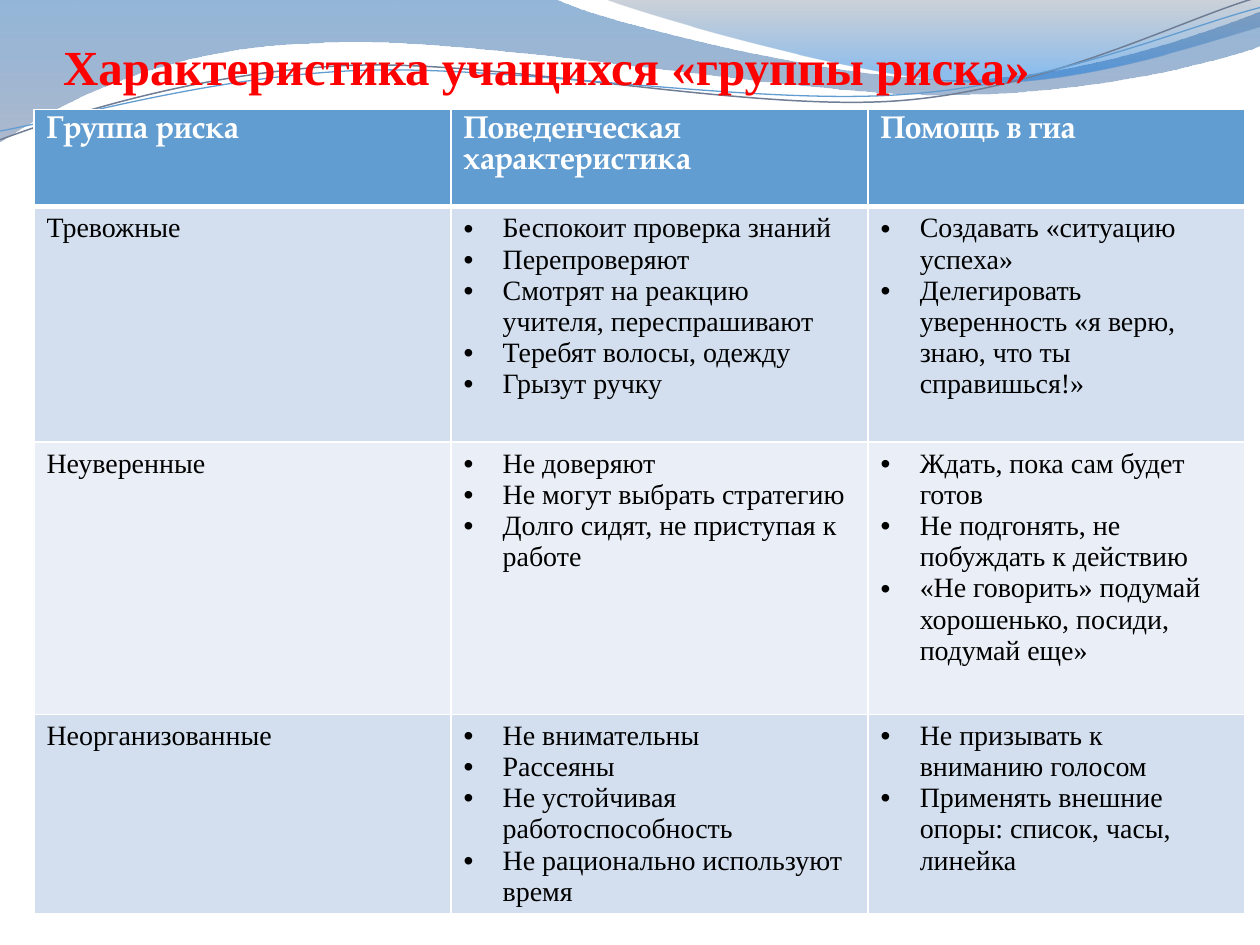
from collections import namedtuple
from dataclasses import dataclass
from math import cos, radians, sin

from lxml.etree import SubElement
from pptx import Presentation
from pptx.dml.color import RGBColor
from pptx.enum.text import MSO_ANCHOR as Anchor, PP_ALIGN as Align
from pptx.oxml.ns import qn
from pptx.util import Inches, Pt

Box = namedtuple("Box", "left top width height")


@dataclass(frozen=True)
class Theme:
    title: str = "FF0000"
    head: str = "629DD1"
    bands: tuple = ("D3DFEE", "EAEFF7")
    ink: str = "000000"
    white: str = "FFFFFF"
    slate: str = "707E95"
    # Gradient stops: position, colour, opacity in percent
    broad: tuple = ((0, "125EAA", 45), (1, "697FA4", 55))
    crest: tuple = ((0, "596982", 30), (0.8, "0670DA", 45))
    serif: str = "Times New Roman"
    label: str = "TeX Gyre Pagella"
    title_pt: int = 28
    head_pt: int = 18
    body_pt: int = 16


THEME = Theme()
TILT = -2.7  # degrees, for the two thin lines

# Wave outlines in inches: a pair is a straight step, six numbers a Bezier curve
BROAD = [(0, 0), (4.4, -0.01), (4.76, 0.17, 6.64, 0.63, 7.58, 0.63),
         (8.53, 0.63, 9.58, 0.26, 10, 0.09), (10.01, 0.36),
         (9.83, 0.44, 8.7, 0.76, 7.46, 0.75), (6.22, 0.75, 3.82, 0.28, 2.57, 0.34),
         (1.29, 0.36, 0.46, 0.83, -0.01, 1.13), (0, 0)]
CREST = [(4.79, -0.01), (5.09, 0.11, 6.82, 0.62, 7.69, 0.65),
         (8.56, 0.69, 9.61, 0.32, 10, 0.21), (10, 0), (4.79, -0.01)]
UPPER = [(0, 1.11), (0.48, 0.93, 1.58, 0.57, 2.77, 0.52),
         (3.95, 0.47, 5.93, 0.89, 7.13, 0.8), (8.33, 0.71, 9.38, 0.15, 9.98, -0.02)]
LOWER = [(0, 1.04), (0.47, 0.96, 1.64, 0.61, 2.83, 0.56),
         (4.03, 0.51, 5.97, 0.84, 7.17, 0.75), (8.36, 0.67, 9.41, 0.21, 10, 0.06)]

HEADS = ["Группа риска", "Поведенческая характеристика", "Помощь в гиа"]
GROUPS = [
    ("Тревожные",
     ["Беспокоит проверка знаний", "Перепроверяют",
      "Смотрят на реакцию учителя, переспрашивают",
      "Теребят волосы, одежду", "Грызут ручку"],
     ["Создавать «ситуацию успеха»",
      "Делегировать уверенность «я верю, знаю, что ты справишься!»"]),
    ("Неуверенные",
     ["Не доверяют", "Не могут выбрать стратегию",
      "Долго сидят, не приступая к работе"],
     ["Ждать, пока сам будет готов", "Не подгонять, не побуждать к действию",
      "«Не говорить» подумай хорошенько, посиди, подумай еще»"]),
    ("Неорганизованные",
     ["Не внимательны", "Рассеяны", "Не устойчивая работоспособность",
      "Не рационально используют время"],
     ["Не призывать к вниманию голосом",
      "Применять внешние опоры: список, часы, линейка"]),
]
COLS = [3.31, 3.31, 2.99]
ROWS = [0.77, 1.87, 2.16, 1.57]


def rgb(code):
    return RGBColor.from_string(code)


def write(frame, lines, size, color, font=THEME.serif, bold=False, bullet=False):
    for i, line in enumerate(lines):
        para = frame.add_paragraph() if i else frame.paragraphs[0]
        para.alignment = Align.LEFT
        run = para.add_run()
        run.text = line
        run.font.name, run.font.size, run.font.bold = font, Pt(size), bold
        run.font.color.rgb = rgb(color)
        if bullet:
            props = para._p.get_or_add_pPr()
            props.set("marL", str(Inches(0.31)))
            props.set("indent", str(-Inches(0.31)))
            SubElement(props, qn("a:buFont"), typeface="Arial")
            SubElement(props, qn("a:buChar"), char="•")


def local(box, x, y, tilt):
    """Place a slide point in the box's own frame, before the box is tilted."""
    half_w, half_h = box.width / 2, box.height / 2
    dx, dy = x - box.left - half_w, y - box.top - half_h
    turn = radians(-tilt)
    return (half_w + dx * cos(turn) - dy * sin(turn),
            half_h + dx * sin(turn) + dy * cos(turn))


def outline(slide, box, steps, close=False, tilt=0):
    """Draw a freeform that fills the box, with true curves as its path."""
    left, top, width, height = map(Inches, box)
    maker = slide.shapes.build_freeform(left, top, scale=1.0)
    maker.add_line_segments([(left + width, top + height)], close=False)
    shape = maker.convert_to_shape()
    shape.rotation = tilt
    shape.shadow.inherit = False
    track = shape._element.find(".//" + qn("a:path"))
    for child in list(track):
        track.remove(child)
    for i, step in enumerate(steps):
        kind = "cubicBezTo" if len(step) == 6 else "lnTo" if i else "moveTo"
        part = SubElement(track, qn(f"a:{kind}"))
        for x, y in zip(step[::2], step[1::2]):
            px, py = local(box, x, y, tilt)
            SubElement(part, qn("a:pt"), x=str(Inches(px)), y=str(Inches(py)))
    if close:
        SubElement(track, qn("a:close"))
    return shape


def band(slide, box, steps, stops):
    shape = outline(slide, box, steps, close=True)
    shape.line.fill.background()
    shape.fill.gradient()
    shape.fill.gradient_angle = 270
    for stop, (place, color, alpha) in zip(shape.fill.gradient_stops, stops):
        stop.position = place
        stop.color.rgb = rgb(color)
        tint = stop._gs.find(qn("a:srgbClr"))
        SubElement(tint, qn("a:alpha"), val=str(alpha * 1000))


def thread(slide, box, steps, color, width):
    shape = outline(slide, box, steps, tilt=TILT)
    shape.fill.background()
    shape.line.color.rgb = rgb(color)
    shape.line.width = Pt(width)


def waves(slide):
    band(slide, Box(-0.01, -0.01, 10.02, 1.14), BROAD, THEME.broad)
    band(slide, Box(4.79, -0.01, 5.21, 0.7), CREST, THEME.crest)
    thread(slide, Box(-0.02, 0.22, 10.02, 0.71), UPPER, THEME.slate, 0.85)
    thread(slide, Box(-0.02, 0.3, 10.03, 0.58), LOWER, THEME.head, 0.75)


def heading(slide, box, text):
    title = slide.shapes.title
    title.left, title.top, title.width, title.height = map(Inches, box)
    frame = title.text_frame
    frame.margin_left = frame.margin_right = frame.margin_bottom = 0
    frame.margin_top = Inches(0.05)
    frame.vertical_anchor = Anchor.BOTTOM
    frame.word_wrap = True
    write(frame, [text], THEME.title_pt, THEME.title, bold=True)
    slide.shapes._spTree.append(title._element)  # bring in front of the waves


def paint(cell, color, base=1):
    """Fill a cell and give it white borders, the lower one base points wide."""
    props = cell._tc.get_or_add_tcPr()
    for side, width in (("L", 1), ("R", 1), ("T", 1), ("B", base)):
        line = SubElement(props, qn(f"a:ln{side}"), w=str(Pt(width)))
        SubElement(SubElement(line, qn("a:solidFill")), qn("a:srgbClr"), val=THEME.white)
    cell.fill.solid()
    cell.fill.fore_color.rgb = rgb(color)


def grid(slide, box):
    table = slide.shapes.add_table(len(ROWS), len(COLS), *map(Inches, box)).table
    for col, width in zip(table.columns, COLS):
        col.width = Inches(width)
    for row, height in zip(table.rows, ROWS):
        row.height = Inches(height)
    for cell, text in zip(table.rows[0].cells, HEADS):
        paint(cell, THEME.head, base=3)
        write(cell.text_frame, [text], THEME.head_pt, THEME.white, THEME.label, bold=True)
    for i, (name, signs, help_) in enumerate(GROUPS):
        for j, lines in enumerate(([name], signs, help_)):
            cell = table.cell(i + 1, j)
            paint(cell, THEME.bands[i % 2])
            write(cell.text_frame, lines, THEME.body_pt, THEME.ink, bullet=j > 0)


def main():
    deck = Presentation()
    deck.slide_width, deck.slide_height = Inches(10), Inches(7.5)
    slide = deck.slides.add_slide(deck.slide_layouts[5])
    waves(slide)
    heading(slide, Box(0.5, 0.21, 9, 0.55), "Характеристика учащихся «группы риска»")
    grid(slide, Box(0.27, 0.87, sum(COLS), sum(ROWS)))
    deck.save("out.pptx")


if __name__ == "__main__":
    main()
